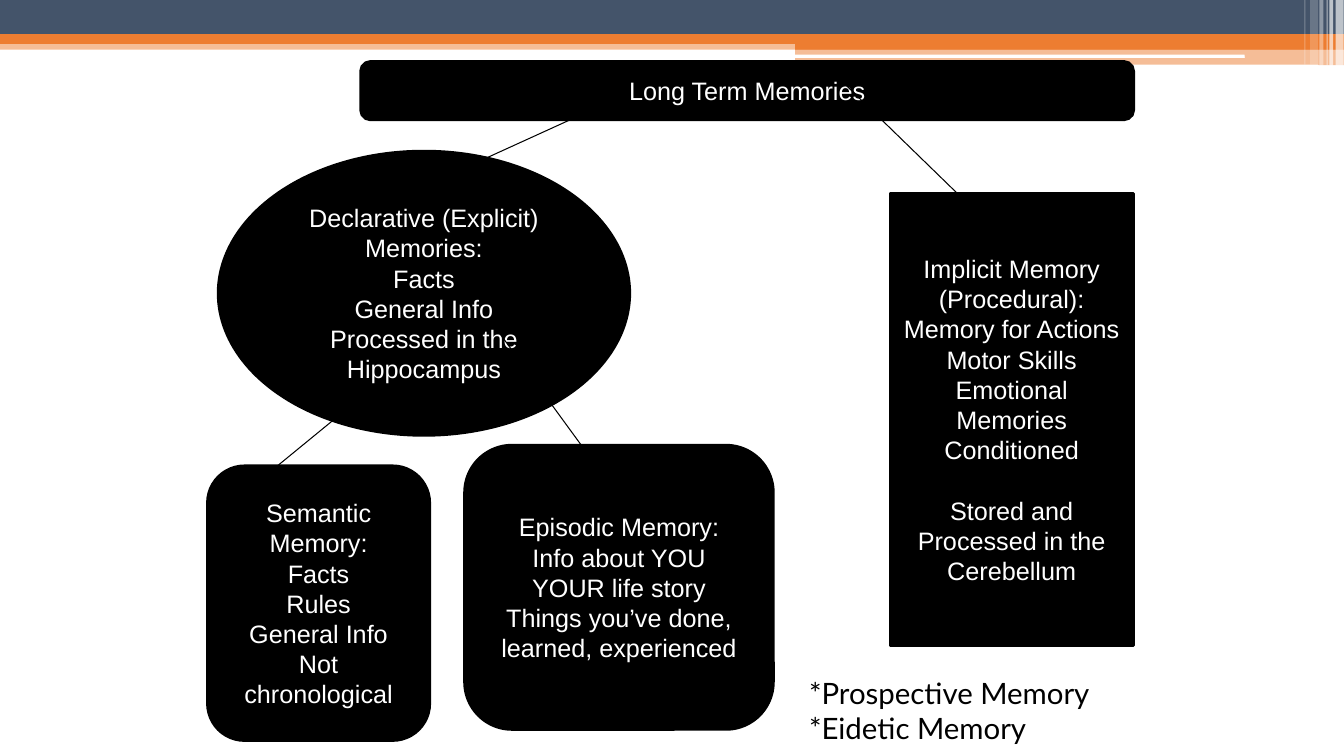
from dataclasses import dataclass

from lxml.etree import SubElement
from pptx import Presentation
from pptx.dml.color import RGBColor
from pptx.enum.shapes import MSO_CONNECTOR, MSO_SHAPE as Preset
from pptx.enum.text import MSO_ANCHOR as Anchor, PP_ALIGN as Align
from pptx.oxml.ns import qn
from pptx.util import Cm, Pt

COLOURS = {"slate": "44546A", "orange": "ED7D31", "white": "FFFFFF", "black": "000000"}
NODE_FONT = {"name": "Arial", "size": Pt(18)}
NOTE_FONT = {"name": "Lato", "size": Pt(21)}
NODE_FRAME = {"word_wrap": True, "vertical_anchor": Anchor.MIDDLE,
              "margin_left": Cm(0.25), "margin_right": Cm(0.25),
              "margin_top": Cm(0.13), "margin_bottom": Cm(0.13)}
NOTE_FRAME = {"word_wrap": True, "vertical_anchor": Anchor.TOP,
              "margin_left": Cm(0.25), "margin_right": Cm(0.25),
              "margin_top": Cm(0.25), "margin_bottom": Cm(0.25)}
SLIDE_WIDTH = 33.87


@dataclass
class Band:
    left: float
    top: float
    width: float
    height: float
    colour: str
    opacity: int = 100
    preset: Preset = Preset.RECTANGLE


@dataclass
class Node:
    preset: Preset
    left: float
    top: float
    width: float
    height: float
    lines: list[str]
    gap_before_last: float = 0


@dataclass
class Link:
    start: tuple[float, float]
    end: tuple[float, float]


BANDS = [
    Band(0, 1.02, SLIDE_WIDTH, 0.23, "orange", 50),
    Band(0, 0, SLIDE_WIDTH, 0.86, "slate"),
    Band(0, 0.86, SLIDE_WIDTH, 0.25, "orange"),
    Band(20.04, 0.99, 13.83, 0.26, "orange"),
    Band(20.04, 1.24, 13.83, 0.4, "orange", 50),
    Band(20.02, 1.38, 11.35, 0.08, "white", preset=Preset.ROUNDED_RECTANGLE),
    Band(27.31, 1.63, 5.92, 0.1, "white", preset=Preset.ROUNDED_RECTANGLE),
    # Pale vertical stripes in the corner
    Band(33.66, 0, 0.2, 1.73, "white", 65),
    Band(33.5, 0, 0.1, 1.73, "white", 65),
    Band(33.43, 0, 0.03, 1.73, "white", 60),
    Band(33.25, 0, 0.1, 1.73, "white", 40),
    Band(33.02, 0, 0.2, 1.63, "white", 20),
    Band(32.87, 0, 0.03, 1.63, "white", 30),
]

NODES = [
    Node(Preset.OVAL, 5.5, 3.81, 10.37, 7.16,
         ["Declarative (Explicit) Memories:", "Facts", "General Info",
          "Processed in the Hippocampus"]),
    Node(Preset.FLOWCHART_ALTERNATE_PROCESS, 5.23, 11.74, 5.6, 6.92,
         ["Semantic Memory:", "Facts", "Rules", "General Info", "Not chronological"]),
    Node(Preset.FLOWCHART_ALTERNATE_PROCESS, 11.71, 11.22, 7.78, 7.16,
         ["Episodic Memory:", "Info about YOU", "YOUR life story",
          "Things you’ve done,", "learned, experienced"]),
    Node(Preset.ROUNDED_RECTANGLE, 9.09, 1.55, 19.48, 1.47, ["Long Term Memories"]),
    Node(Preset.RECTANGLE, 22.43, 4.87, 6.13, 11.4,
         ["Implicit Memory (Procedural):", "Memory for Actions", "Motor Skills",
          "Emotional Memories", "Conditioned",
          "Stored and Processed in the Cerebellum"], gap_before_last=21.6),
]

LINKS = [
    Link((9.31, 9.84), (6.99, 11.74)),
    Link((12.49, 8.26), (15.03, 11.74)),
    Link((11.71, 4.23), (15.88, 2.33)),
    Link((21.17, 2), (24.77, 5.5)),
]


def rgb(name: str) -> RGBColor:
    return RGBColor.from_string(COLOURS[name])


def apply(target, values: dict) -> None:
    for name, value in values.items():
        setattr(target, name, value)


def add_filled_shape(slide, item: Band | Node, colour: str):
    shape = slide.shapes.add_shape(item.preset, Cm(item.left), Cm(item.top),
                                   Cm(item.width), Cm(item.height))
    shape.shadow.inherit = False
    shape.fill.solid()
    shape.fill.fore_color.rgb = rgb(colour)
    return shape


def write_lines(frame, lines: list[str], frame_format: dict, font_format: dict,
                colour: str, alignment: Align) -> None:
    apply(frame, frame_format)
    for index, line in enumerate(lines):
        paragraph = frame.add_paragraph() if index else frame.paragraphs[0]
        paragraph.alignment = alignment
        run = paragraph.add_run()
        run.text = line
        apply(run.font, font_format)
        run.font.color.rgb = rgb(colour)


def add_band(slide, band: Band) -> None:
    shape = add_filled_shape(slide, band, band.colour)
    shape.line.fill.background()
    if band.opacity < 100:
        colour = shape.fill._xPr.find(f".//{qn('a:srgbClr')}")
        SubElement(colour, qn("a:alpha"), val=str(band.opacity * 1000))


def add_node(slide, node: Node) -> None:
    shape = add_filled_shape(slide, node, "black")
    shape.line.color.rgb = rgb("black")
    shape.line.width = Pt(2)
    write_lines(shape.text_frame, node.lines, NODE_FRAME, NODE_FONT, "white", Align.CENTER)
    if node.gap_before_last:
        shape.text_frame.paragraphs[-1].space_before = Pt(node.gap_before_last)


def add_link(slide, link: Link) -> None:
    ends = [Cm(value) for value in (*link.start, *link.end)]
    connector = slide.shapes.add_connector(MSO_CONNECTOR.STRAIGHT, *ends)
    connector.line.color.rgb = rgb("black")
    connector.line.width = Pt(0.75)
    SubElement(connector._element.spPr, qn("a:effectLst"))


def main() -> None:
    presentation = Presentation()
    presentation.slide_width = Cm(SLIDE_WIDTH)
    presentation.slide_height = Cm(19.05)
    slide = presentation.slides.add_slide(presentation.slide_layouts[6])

    # Header decoration
    for band in BANDS:
        add_band(slide, band)

    # Memory tree
    for node in NODES:
        add_node(slide, node)
    for link in LINKS:
        add_link(slide, link)

    # Further kinds of memory
    note = slide.shapes.add_textbox(Cm(20.14), Cm(16.76), Cm(8.89), Cm(1.9))
    write_lines(note.text_frame, ["*Prospective Memory", "*Eidetic Memory"],
                NOTE_FRAME, NOTE_FONT, "black", Align.LEFT)

    presentation.save("out.pptx")


if __name__ == "__main__":
    main()
